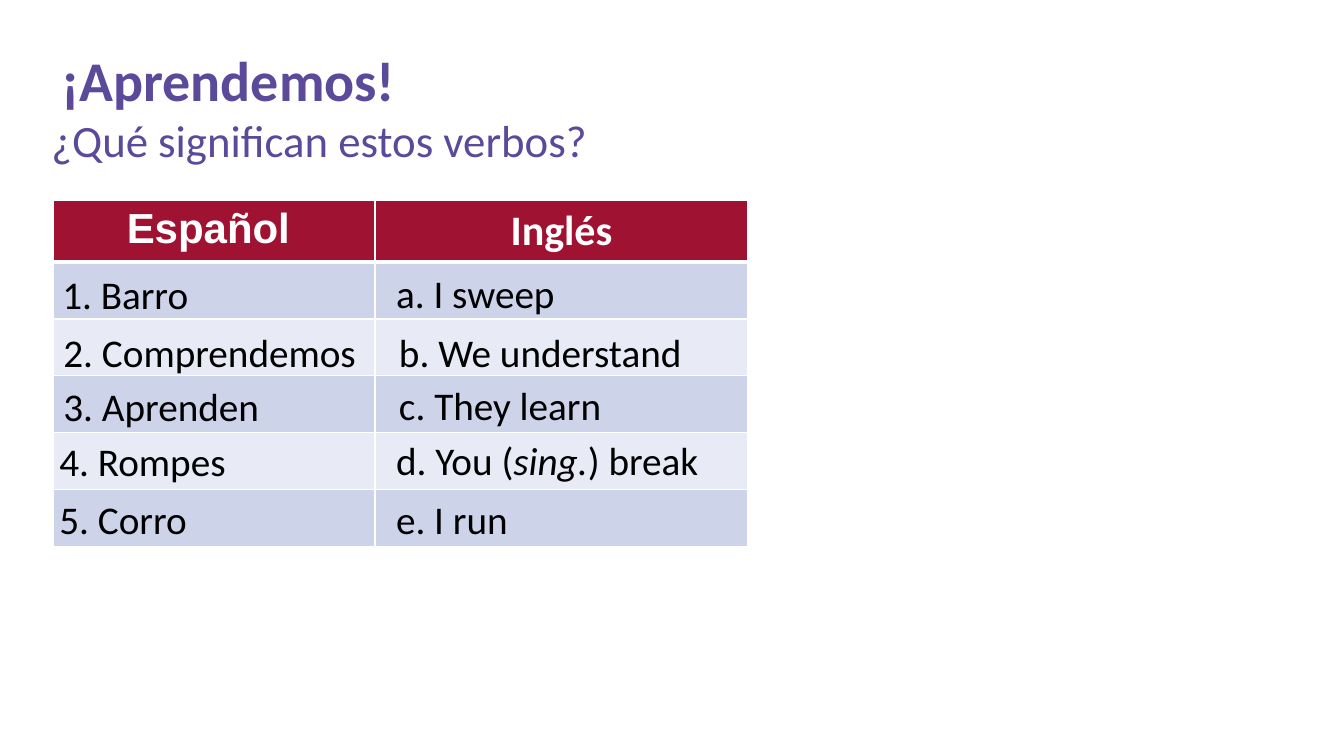
from lxml import etree
from pptx import Presentation
from pptx import util as u
from pptx.dml.color import RGBColor
from pptx.enum import text
from pptx.oxml.ns import qn

# Content
TITLE = "¡Aprendemos!"
SUBTITLE = "¿Qué significan estos verbos?"
HEADERS = [("Español ", "Arial"), ("Inglés", "Calibri")]
# Each label: left, top, width, runs of (words, italic)
SPANISH = [
    (37.4, 189.4, 152.6, [("1. Barro", False)]),
    (38.2, 231.1, 301.7, [("2. Comprendemos", False)]),
    (38.2, 269.3, 207.4, [("3. Aprenden", False)]),
    (35.3, 308.9, 195.8, [("4. Rompes", False)]),
    (35.3, 349.9, 190.8, [("5. Corro", False)]),
]
ENGLISH = [
    (275.8, 188.6, 238.3, [("a. I sweep", False)]),
    (277.9, 231.1, 238.3, [("b. We understand", False)]),
    (277.9, 268.6, 190.8, [("c. They learn", False)]),
    (275.8, 308.2, 250.6, [("d. You (", False), ("sing.", True), (") break", False)]),
    (275.8, 349.9, 222.5, [("e. I run", False)]),
]
THEME = {
    "font": "Calibri", "purple": "5B499A", "red": "9F1231", "white": "FFFFFF",
    "black": "000000", "bands": ["CDD4EA", "E8EBF5"],
    "title": 40, "subtitle": 32, "header": 30, "label": 28,
}
COLUMNS = [229.7, 266.4]
HEADER_H, ROW_H, LABEL_H = 43, 40.7, 41.2


def add_run(p, words, size, color, bold=False, italic=False, font=THEME["font"]):
    r = p.add_run()
    r.text = words
    r.font.name, r.font.size = font, u.Pt(size)
    r.font.bold, r.font.italic = bold, italic
    r.font.color.rgb = RGBColor.from_string(color)


def place(sp, left, top, width, height):
    sp.left, sp.top, sp.width, sp.height = map(u.Pt, (left, top, width, height))


def fill_heading(sp, box, words, size, bold):
    place(sp, *box)
    tf = sp.text_frame
    tf.word_wrap, tf.auto_size = True, text.MSO_AUTO_SIZE.NONE
    tf.vertical_anchor = text.MSO_ANCHOR.TOP
    p = tf.paragraphs[0]
    pPr = p._p.get_or_add_pPr()
    pPr.set("marL", "0")
    pPr.set("indent", "0")
    etree.SubElement(pPr, qn("a:buNone"))
    p.alignment, p.line_spacing, p.space_before = text.PP_ALIGN.LEFT, 1.0, u.Pt(0)
    add_run(p, words, size, THEME["purple"], bold)


def style_cell(cell, color, bottom):
    tcPr = cell._tc.get_or_add_tcPr()
    for side, width in (("L", 1), ("R", 1), ("T", 1), ("B", bottom)):
        ln = etree.SubElement(tcPr, qn(f"a:ln{side}"), w=str(u.Pt(width)))
        solid = etree.SubElement(ln, qn("a:solidFill"))
        etree.SubElement(solid, qn("a:srgbClr"), val=THEME["white"])
    cell.fill.solid()
    cell.fill.fore_color.rgb = RGBColor.from_string(color)


def main():
    prs = Presentation()
    prs.slide_width, prs.slide_height = u.Pt(960), u.Pt(540)
    s = prs.slides.add_slide(prs.slide_layouts[1])

    # Headings
    fill_heading(s.shapes.title, (36.7, 28.8, 828, 49), TITLE, THEME["title"], True)
    fill_heading(s.placeholders[1], (29.5, 77, 930, 60), SUBTITLE, THEME["subtitle"], False)

    # Table
    rows = len(SPANISH) + 1
    table = s.shapes.add_table(rows, len(COLUMNS), u.Pt(38.2), u.Pt(143.3),
                               u.Pt(sum(COLUMNS)), u.Pt(HEADER_H + ROW_H * len(SPANISH))).table
    for c, width in enumerate(COLUMNS):
        table.columns[c].width = u.Pt(width)
    for r in range(rows):
        table.rows[r].height = u.Pt(ROW_H if r else HEADER_H)
        for c in range(len(COLUMNS)):
            color = THEME["bands"][(r - 1) % 2] if r else THEME["red"]
            style_cell(table.cell(r, c), color, 1 if r else 3)
    for c, (words, font) in enumerate(HEADERS):
        cell = table.cell(0, c)
        cell.margin_left = cell.margin_right = u.Pt(5.8)
        p = cell.text_frame.paragraphs[0]
        p.alignment = text.PP_ALIGN.CENTER
        add_run(p, words, THEME["header"], THEME["white"], True, font=font)

    # Verb labels
    for left, top, width, runs in SPANISH + ENGLISH:
        sp = s.shapes.add_textbox(*map(u.Pt, (left, top, width, LABEL_H)))
        tf = sp.text_frame
        tf.word_wrap, tf.auto_size = True, text.MSO_AUTO_SIZE.SHAPE_TO_FIT_TEXT
        for words, italic in runs:
            add_run(tf.paragraphs[0], words, THEME["label"], THEME["black"], italic=italic)

    prs.save("out.pptx")


if __name__ == "__main__":
    main()
